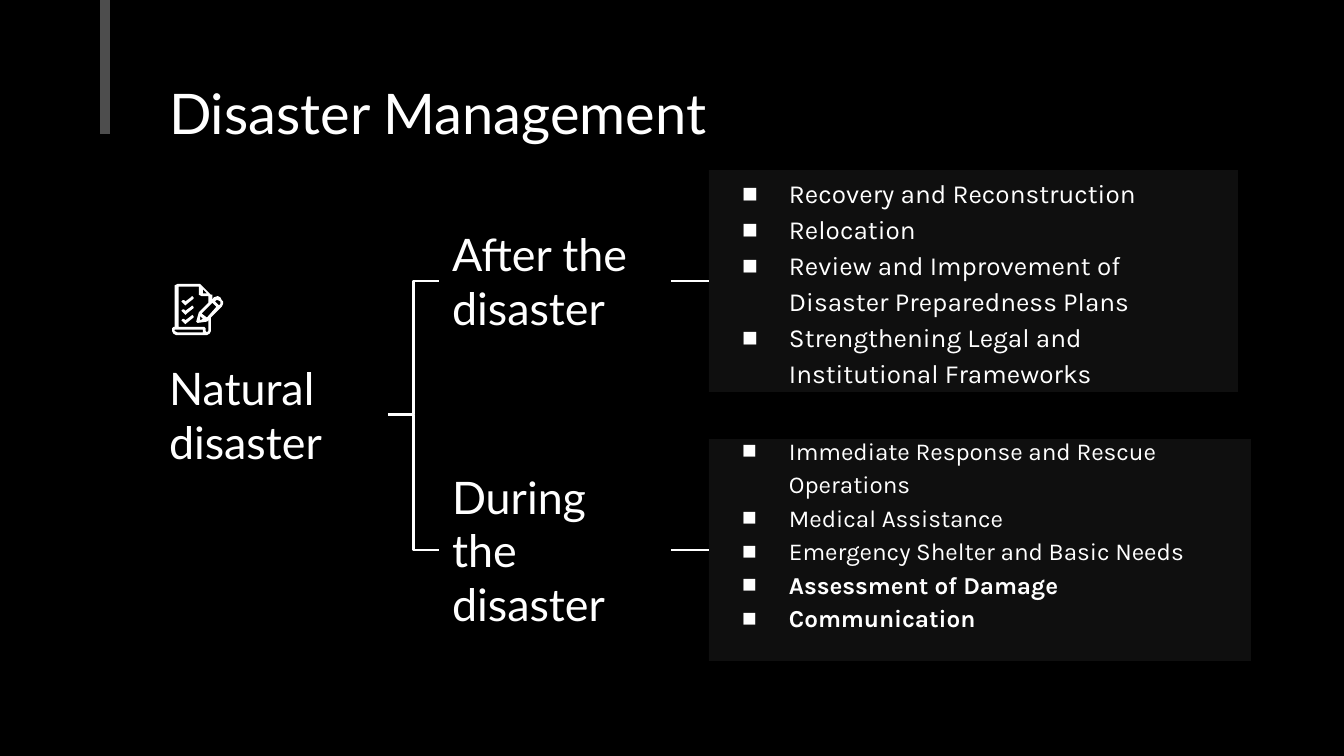
from lxml.etree import SubElement
from pptx import Presentation
from pptx.dml.color import RGBColor
from pptx.enum.shapes import MSO_CONNECTOR, MSO_SHAPE
from pptx.enum.text import MSO_ANCHOR, MSO_AUTO_SIZE, PP_ALIGN
from pptx.oxml.ns import qn
from pptx.util import Emu, Pt

COLORS = {"background": "000000", "ink": "FFFFFF", "panel": "191919"}
INSET = 13
BRANCHES = [
    {"label": "After the disaster", "middle": 281, "width": 529, "size": 14,
     "insets": (INSET, INSET), "bold_from": 4,
     "items": ["Recovery and Reconstruction",
               "Relocation",
               "Review and Improvement of Disaster Preparedness Plans",
               "Strengthening Legal and Institutional Frameworks"]},
    {"label": "During the disaster", "middle": 550, "width": 542, "size": 13,
     "insets": (0, 36), "bold_from": 3,
     "items": ["Immediate Response and Rescue Operations",
               "Medical Assistance",
               "Emergency Shelter and Basic Needs",
               "Assessment of Damage",
               "Communication"]},
]
ICON_UNIT = 9144
TICK = [(15, 9), (14, 10), (10, 13), (9, 12), (8, 12), (7, 13),
        (10, 16), (11, 15), (16, 11), (16, 10)]
ICON_CONTOURS = [
    [(4, 0), (2, 1), (2, 32), (1, 32), (0, 33), (0, 35), (1, 37), (3, 38),
     (26, 38), (28, 37), (29, 35), (29, 25), (37, 17), (38, 15), (38, 13),
     (37, 12), (36, 10), (34, 9), (31, 10), (30, 12), (30, 8), (29, 8),
     (22, 1), (21, 0)],
    [(20, 2), (20, 8), (22, 9), (27, 9), (27, 14), (20, 21), (18, 28),
     (19, 29), (26, 28), (27, 27), (27, 35), (26, 36), (25, 35), (25, 33),
     (24, 32), (5, 32), (5, 2)],
    [(23, 4), (26, 7), (23, 7)],
    [(23, 34), (23, 36), (4, 36), (2, 35), (2, 34)],
    [(21, 24), (23, 26), (21, 27)],
    [(30, 14), (33, 17), (26, 25), (22, 22)],
    [(33, 12), (34, 12), (36, 13), (36, 15), (35, 16), (32, 13)],
] + [[(x, y + 7 * row) for x, y in TICK] for row in range(3)]


def px(length):
    return Emu(round(length * 914400 / 134.4))


def color(name):
    return RGBColor.from_string(COLORS[name])


def place(shape, box):
    shape.left, shape.top, shape.width, shape.height = map(px, box)


def fill_shape(shape, name, alpha=100):
    shape.fill.solid()
    shape.fill.fore_color.rgb = color(name)
    if alpha < 100:
        srgb = shape.fill._xPr.find(".//" + qn("a:srgbClr"))
        SubElement(srgb, qn("a:alpha"), val=str(alpha * 1000))


def set_frame(shape, anchor, top=INSET, bottom=INSET):
    frame = shape.text_frame
    frame.word_wrap = True
    frame.auto_size = MSO_AUTO_SIZE.NONE
    frame.vertical_anchor = anchor
    frame.margin_left = frame.margin_right = px(INSET)
    frame.margin_top, frame.margin_bottom = px(top), px(bottom)
    return frame


def style_paragraph(paragraph, font_name, size, bold=False):
    paragraph.alignment = PP_ALIGN.LEFT
    paragraph.space_before = Pt(0)
    font = paragraph.font
    font.name, font.size, font.bold = font_name, Pt(size), bold
    font.color.rgb = color("ink")


def add_bullet(paragraph):
    properties = paragraph._p.get_or_add_pPr()
    properties.set("marL", str(px(67)))
    properties.set("indent", str(px(-47)))
    bullet_color = SubElement(properties, qn("a:buClr"))
    SubElement(bullet_color, qn("a:srgbClr"), val=COLORS["ink"])
    SubElement(properties, qn("a:buChar"), char="■")


def add_accent_bar(slide, box):
    bar = slide.shapes.add_shape(MSO_SHAPE.RECTANGLE, *map(px, box))
    bar.shadow.inherit = False
    bar.line.fill.background()
    fill_shape(bar, "ink", 30)


def fill_title(slide, box, text):
    title = slide.shapes.title
    place(title, box)
    frame = set_frame(title, MSO_ANCHOR.TOP)
    frame.text = text
    style_paragraph(frame.paragraphs[0], "Lato", 30)


def add_label(slide, box, text):
    label = slide.shapes.add_textbox(*map(px, box))
    frame = set_frame(label, MSO_ANCHOR.MIDDLE)
    frame.text = text
    style_paragraph(frame.paragraphs[0], "Lato", 24)


def fill_panel(panel, box, branch):
    place(panel, box)
    fill_shape(panel, "panel", 60)
    frame = set_frame(panel, MSO_ANCHOR.MIDDLE, *branch["insets"])
    frame.text = "\n".join(branch["items"])
    for index, paragraph in enumerate(frame.paragraphs):
        paragraph.line_spacing = 1.15
        add_bullet(paragraph)
        style_paragraph(paragraph, "Karla", branch["size"], index >= branch["bold_from"])


def add_link(slide, kind, start, end):
    link = slide.shapes.add_connector(kind, *map(px, start + end))
    link.line.color.rgb = color("ink")
    link.line.width = Pt(1.5)
    SubElement(link._element.spPr, qn("a:effectLst"))


def add_checklist_icon(slide, left, top):
    first, *others = ICON_CONTOURS
    builder = slide.shapes.build_freeform(*first[0], scale=ICON_UNIT)
    builder.add_line_segments(first[1:], close=True)
    for contour in others:
        builder.move_to(*contour[0])
        builder.add_line_segments(contour[1:], close=True)
    icon = builder.convert_to_shape(px(left), px(top))
    icon.shadow.inherit = False
    icon.line.fill.background()
    fill_shape(icon, "ink")


def add_tree(slide, box):
    left, top, width, height = box
    label_width, label_height, gap = 232, 116, 51
    middle = top + height // 2
    branch_left = left + label_width + gap
    branch_right = branch_left + label_width
    panel_left = left + 553
    add_label(slide, (left, middle - label_height // 2, label_width, label_height),
              "Natural disaster")
    add_checklist_icon(slide, left + 16, top + 114)
    panels = list(slide.placeholders)[1:]
    for panel, branch in zip(panels, BRANCHES):
        row = branch["middle"]
        add_label(slide, (branch_left, row - label_height // 2, label_width, label_height),
                  branch["label"])
        fill_panel(panel, (panel_left, row - 111, branch["width"], 222), branch)
        add_link(slide, MSO_CONNECTOR.ELBOW, (left + label_width, middle), (branch_left, row))
        add_link(slide, MSO_CONNECTOR.STRAIGHT, (branch_right, row), (panel_left, row))


def main():
    presentation = Presentation()
    presentation.slide_width, presentation.slide_height = px(1344), px(756)
    slide = presentation.slides.add_slide(presentation.slide_layouts[3])
    slide.background.fill.solid()
    slide.background.fill.fore_color.rgb = color("background")
    add_accent_bar(slide, (100, 0, 10, 134))
    fill_title(slide, (156, 66, 1082, 85), "Disaster Management")
    add_tree(slide, (156, 170, 1095, 491))
    presentation.save("out.pptx")


if __name__ == "__main__":
    main()
